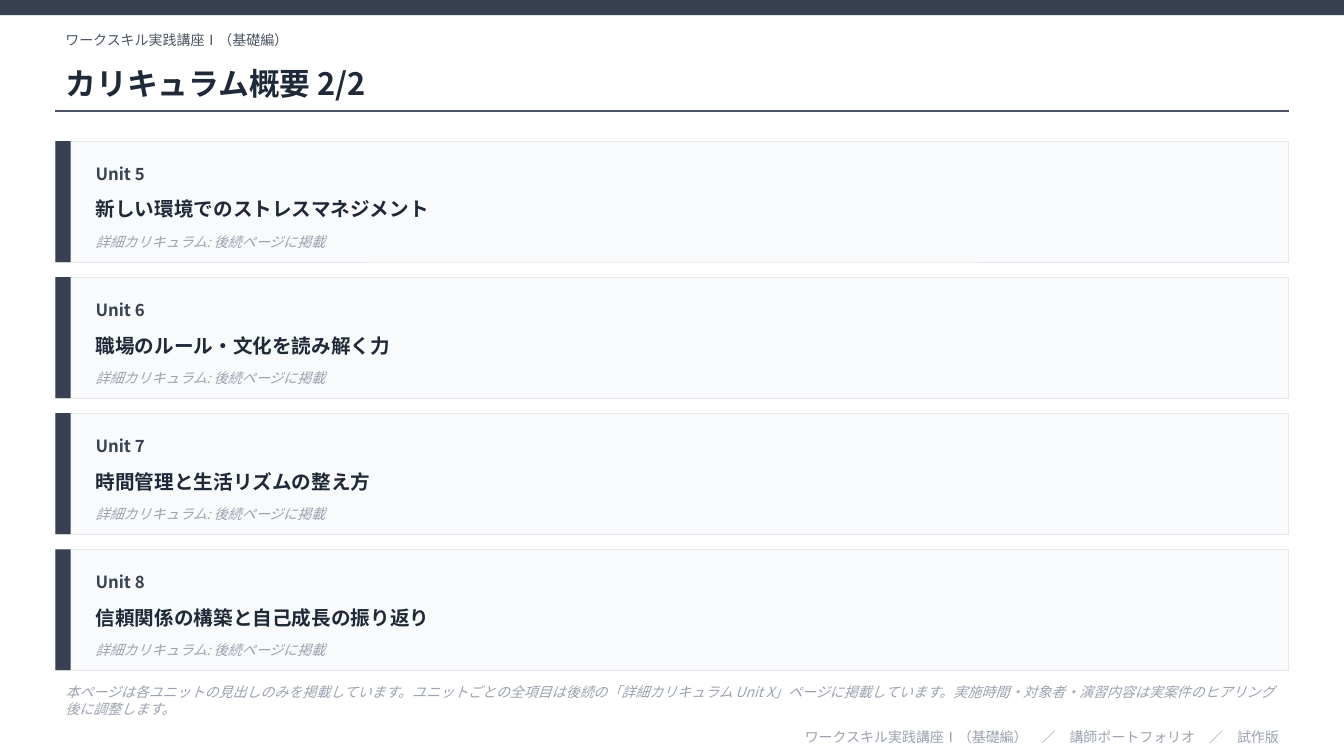
from lxml import etree
from pptx import Presentation
from pptx.dml.color import RGBColor
from pptx.enum import shapes, text
from pptx.oxml.ns import qn
from pptx.util import Inches, Pt

FONT = "Noto Sans CJK JP"
NAVY = RGBColor(0x37, 0x41, 0x51)
INK = RGBColor(0x1F, 0x29, 0x37)
SLATE = RGBColor(0x4B, 0x55, 0x63)
GRAY = RGBColor(0x9C, 0xA3, 0xAF)
EDGE = RGBColor(0xE5, 0xE7, 0xEB)
PALE = RGBColor(0xF9, 0xFA, 0xFB)

LEFT, WIDE = 0.55, 12.23
COURSE = "ワークスキル実践講座Ⅰ（基礎編）"
UNITS = [
    "新しい環境でのストレスマネジメント",
    "職場のルール・文化を読み解く力",
    "時間管理と生活リズムの整え方",
    "信頼関係の構築と自己成長の振り返り",
]

deck = Presentation()
deck.slide_width, deck.slide_height = Inches(13.33), Inches(7.5)
slide = deck.slides.add_slide(deck.slide_layouts[5])


def write(words, at, size, color, box=None, align=text.PP_ALIGN.LEFT, **style):
    """Set one formatted line of text in a placeholder or a new text box."""
    place = [Inches(n) for n in at]
    if box is None:
        box = slide.shapes.add_textbox(*place)
    else:
        box.left, box.top, box.width, box.height = place
    frame = box.text_frame
    frame.word_wrap = True
    frame.auto_size = text.MSO_AUTO_SIZE.NONE
    frame.vertical_anchor = text.MSO_ANCHOR.MIDDLE
    line = frame.paragraphs[0]
    line.alignment = align
    run = line.add_run()
    run.text = words
    for key, value in {"size": Pt(size), "name": FONT, **style}.items():
        setattr(run.font, key, value)
    run.font.color.rgb = color
    etree.SubElement(run._r.get_or_add_rPr(), qn("a:ea"), typeface=FONT)


def block(at, fill, edge=None):
    rect = slide.shapes.add_shape(shapes.MSO_SHAPE.RECTANGLE, *[Inches(n) for n in at])
    rect.shadow.inherit = False
    rect.fill.solid()
    rect.fill.fore_color.rgb = fill
    if edge is None:
        rect.line.fill.background()
    else:
        rect.line.color.rgb = edge
        rect.line.width = Pt(0.5)


# Header
block((0, 0, 13.33, 0.15), NAVY)
write(COURSE, (LEFT, 0.25, WIDE, 0.3), 10, SLATE)
write("カリキュラム概要 2/2", (LEFT, 0.55, WIDE, 0.55), 22, INK,
      box=slide.shapes.title, bold=True)
rule = slide.shapes.add_connector(
    shapes.MSO_CONNECTOR.STRAIGHT,
    Inches(LEFT), Inches(1.1), Inches(LEFT + WIDE), Inches(1.1))
rule.line.color.rgb = SLATE
rule.line.width = Pt(1)
etree.SubElement(rule._element.spPr, qn("a:effectLst"))

# Unit cards
for i, name in enumerate(UNITS):
    top = 1.4 + 1.35 * i
    block((LEFT, top, WIDE, 1.2), PALE, EDGE)
    block((LEFT, top, 0.15, 1.2), NAVY)
    write(f"Unit {i + 5}", (0.85, top + 0.12, 1.5, 0.4), 12, NAVY, bold=True)
    write(name, (0.85, top + 0.45, 11.73, 0.45), 14, INK, bold=True)
    write("詳細カリキュラム: 後続ページに掲載", (0.85, top + 0.85, 11.73, 0.3),
          10, GRAY, italic=True)

# Note and footer
write("本ページは各ユニットの見出しのみを掲載しています。"
      "ユニットごとの全項目は後続の「詳細カリキュラム Unit X」ページに掲載しています。"
      "実施時間・対象者・演習内容は実案件のヒアリング後に調整します。",
      (LEFT, 6.75, WIDE, 0.4), 10, GRAY, italic=True)
write(f"{COURSE}　／　講師ポートフォリオ　／　試作版",
      (LEFT, 7.2, WIDE, 0.22), 10, GRAY, align=text.PP_ALIGN.RIGHT)

deck.save("out.pptx")
